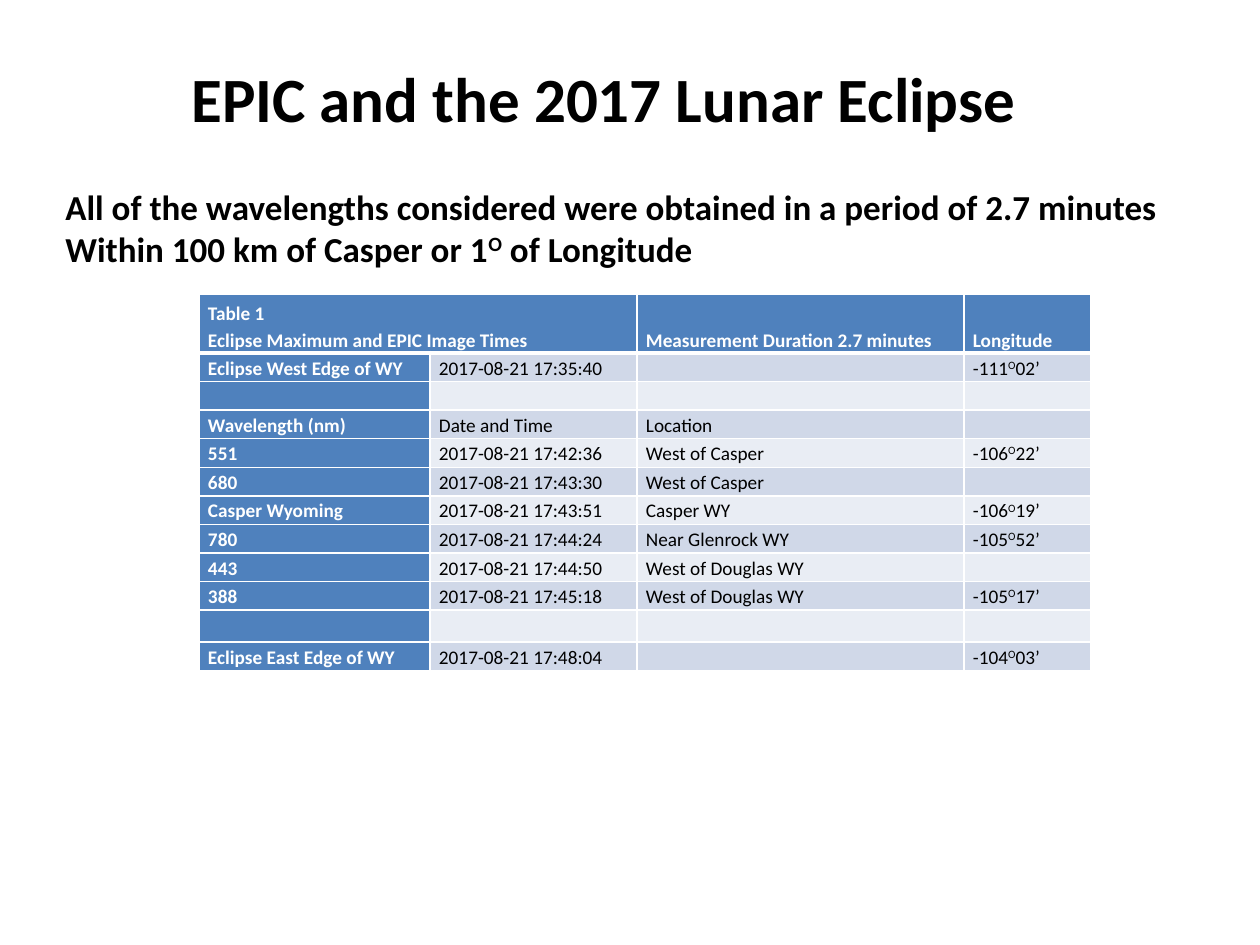
from lxml import etree
from pptx import Presentation
from pptx.dml.color import RGBColor
from pptx.enum.text import MSO_ANCHOR, MSO_AUTO_SIZE
from pptx.oxml.ns import qn
from pptx.util import Emu, Pt

BOTTOM, TOP = MSO_ANCHOR.BOTTOM, MSO_ANCHOR.TOP
GROW = MSO_AUTO_SIZE.SHAPE_TO_FIT_TEXT

THEME = {
    "font": "Calibri",
    "title": 36, "lead": 20, "cell": 11,
    "ink": "000000", "white": "FFFFFF",
    "head": "4F81BD", "bands": ("D0D8E8", "E9EDF4"),
    "line": 1, "head_line": 3, "spacing": 1.15,
}

TEXTS = [
    ((53, 179, 1126, 97), "lead", [
        "All of the wavelengths considered were obtained in a period of 2.7 minutes",
        "Within 100 km of Casper or 1^O^ of Longitude",
    ]),
    ((179, 53, 858, 89), "title", ["EPIC and the 2017 Lunar Eclipse"]),
]

ROWS = [
    ("Table 1\nEclipse Maximum and EPIC Image Times", "",
     "Measurement Duration 2.7 minutes", "Longitude"),
    ("Eclipse West Edge of WY", "2017-08-21 17:35:40", "", "-111^O^02’"),
    ("", "", "", ""),
    ("Wavelength (nm)", "Date and Time", "Location", ""),
    ("551", "2017-08-21 17:42:36", "West of Casper", "-106^O^22’"),
    ("680", "2017-08-21 17:43:30", "West of Casper", ""),
    ("Casper Wyoming", "2017-08-21 17:43:51", "Casper WY", "-106^O^19’"),
    ("780", "2017-08-21 17:44:24", "Near Glenrock WY", "-105^O^52’"),
    ("443", "2017-08-21 17:44:50", "West of Douglas WY", ""),
    ("388", "2017-08-21 17:45:18", "West of Douglas WY", "-105^O^17’"),
    ("", "", "", ""),
    ("Eclipse East Edge of WY", "2017-08-21 17:48:04", "", "-104^O^03’"),
]
TABLE_BOX = (199, 294, 892, 377)
COLUMNS = (231, 207, 327, 127)
FIXED_ROWS = {0: 59, 10: 32}
CELL_PAD = 9


def px(n):
    return Emu(round(n * 914400 / 126))


def rgb(name):
    return RGBColor.from_string(name)


def write(p, text, size, color, bold):
    fmt = {"name": THEME["font"], "size": Pt(size), "bold": bold}
    for i, part in enumerate(text.split("^")):
        if not part:
            continue
        r = p.add_run()
        r.text = part
        for key, value in fmt.items():
            setattr(r.font, key, value)
        r.font.color.rgb = rgb(color)
        if i % 2:
            r._r.get_or_add_rPr().set("baseline", "30000")
    if not text:
        etree.SubElement(p._p, qn("a:endParaRPr"), sz=str(size * 100))


def write_lines(tf, lines, size, color, bold, spacing=None):
    for i, line in enumerate(lines):
        p = tf.add_paragraph() if i else tf.paragraphs[0]
        p.line_spacing = spacing
        write(p, line, size, color, bold)


def set_borders(cell, widths):
    tcPr = cell._tc.get_or_add_tcPr()
    for side, width in zip("LRTB", widths):
        ln = etree.SubElement(tcPr, qn("a:ln" + side), w=str(Pt(width)))
        fill = etree.SubElement(ln, qn("a:solidFill"))
        etree.SubElement(fill, qn("a:srgbClr"), val=THEME["white"])


def add_table(s):
    table = s.shapes.add_table(len(ROWS), len(COLUMNS), *map(px, TABLE_BOX)).table
    for column, width in zip(table.columns, COLUMNS):
        column.width = px(width)
    plain = (TABLE_BOX[3] - sum(FIXED_ROWS.values())) / (len(ROWS) - len(FIXED_ROWS))
    thin, thick = THEME["line"], THEME["head_line"]
    for i, row in enumerate(ROWS):
        table.rows[i].height = px(FIXED_ROWS.get(i, plain))
        for j, text in enumerate(row):
            cell = table.cell(i, j)
            is_head = i == 0 or j == 0
            fmt = {
                "margin_left": px(CELL_PAD), "margin_right": px(CELL_PAD),
                "margin_top": 0, "margin_bottom": 0,
                "vertical_anchor": TOP if i else BOTTOM,
            }
            for key, value in fmt.items():
                setattr(cell, key, value)
            set_borders(cell, (thin, thin, thick if i == 1 else thin,
                               thin if i else thick))
            cell.fill.solid()
            cell.fill.fore_color.rgb = rgb(
                THEME["head"] if is_head else THEME["bands"][(i - 1) % 2])
            write_lines(cell.text_frame, text.split("\n"), THEME["cell"],
                        THEME["white" if is_head else "ink"], is_head, THEME["spacing"])
    table.cell(0, 0).merge(table.cell(0, 1))


def add_text(s, box, size, lines):
    tf = s.shapes.add_textbox(*map(px, box)).text_frame
    tf.word_wrap = False
    tf.auto_size = GROW
    write_lines(tf, lines, THEME[size], THEME["ink"], True)


def main():
    prs = Presentation()
    prs.slide_width, prs.slide_height = px(1260), px(945)
    s = prs.slides.add_slide(prs.slide_layouts[6])
    add_table(s)
    for box, size, lines in TEXTS:
        add_text(s, box, size, lines)
    prs.save("out.pptx")


if __name__ == "__main__":
    main()
